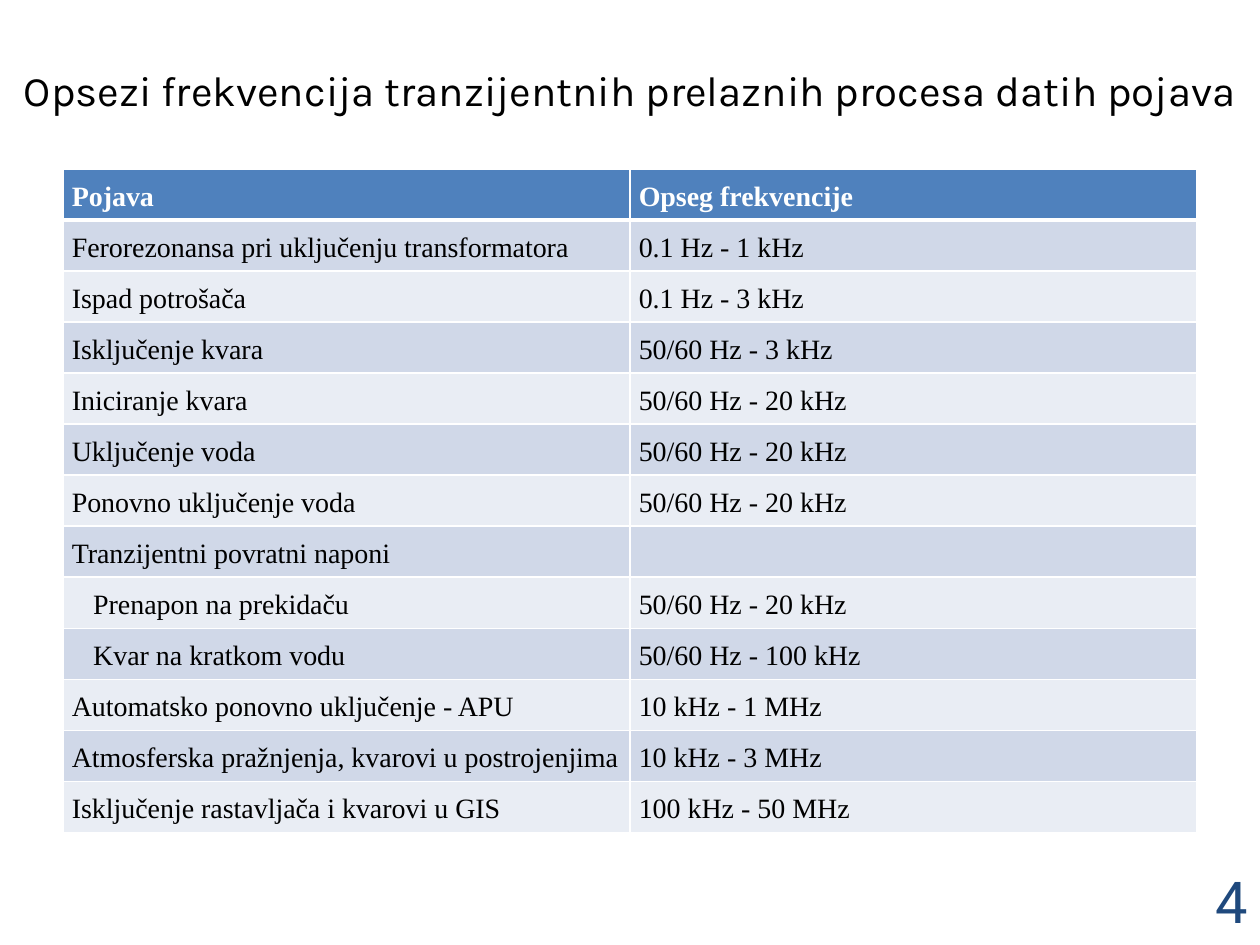
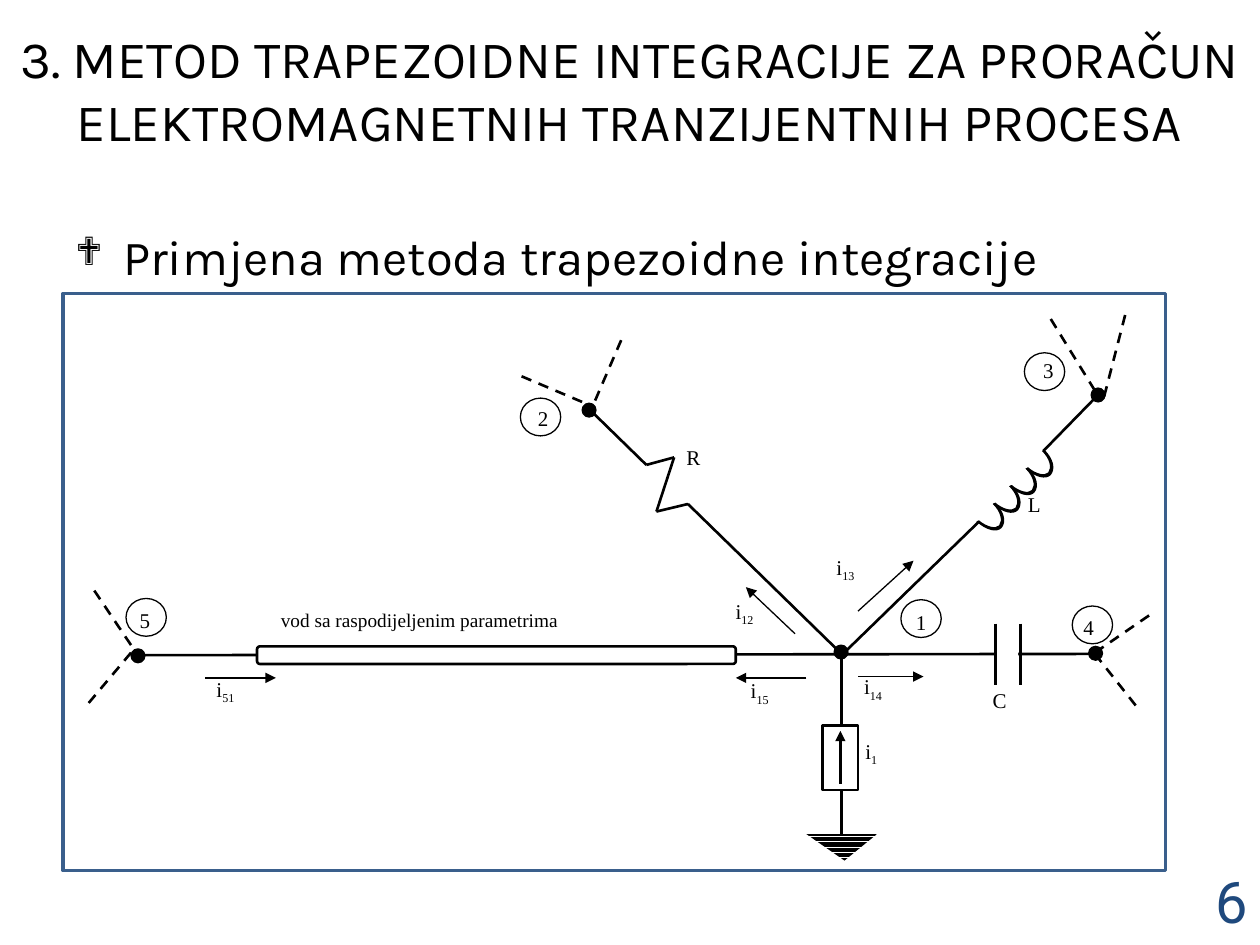
from dataclasses import dataclass
from itertools import pairwise
from typing import NamedTuple

from lxml import etree
from pptx import Presentation
from pptx.dml.color import RGBColor
from pptx.enum.dml import MSO_LINE, MSO_PATTERN
from pptx.enum.shapes import MSO_CONNECTOR, MSO_SHAPE
from pptx.enum.text import MSO_ANCHOR, PP_ALIGN
from pptx.oxml.ns import qn
from pptx.util import Pt

PX = 9144  # EMU in one px, 100 px to the inch
LEFT, CENTER, RIGHT = PP_ALIGN.LEFT, PP_ALIGN.CENTER, PP_ALIGN.RIGHT
TOP, MIDDLE = MSO_ANCHOR.TOP, MSO_ANCHOR.MIDDLE
RECT, ROUND = MSO_SHAPE.RECTANGLE, MSO_SHAPE.ROUNDED_RECTANGLE
OVAL, WEDGE = MSO_SHAPE.OVAL, MSO_SHAPE.ISOSCELES_TRIANGLE
STRAIGHT, DASH = MSO_CONNECTOR.STRAIGHT, MSO_LINE.DASH
STRIPES = MSO_PATTERN.DARK_HORIZONTAL


@dataclass(frozen=True)
class Theme:
    black: str = "000000"
    white: str = "FFFFFF"
    head: str = "4F81BD"
    bands: tuple = ("D0D8E8", "E9EDF4")
    frame: str = "3A5F8C"
    number: str = "1F497D"
    sans: str = "Karla"
    serif: str = "Times New Roman"
    digit: str = "Roboto"
    symbol: str = "Wingdings"
    thin: float = 0.75
    thick: float = 1.5
    number_size: int = 33
    body_size: int = 28
    cell_size: int = 16
    label_size: int = 12
    note_size: int = 11


THEME = Theme()


class Box(NamedTuple):
    x: int
    y: int
    w: int
    h: int

    def emu(self) -> list:
        return [PX * side for side in self]


class Row(NamedTuple):
    event: str
    band: str
    indent: int = 0


class Wire(NamedTuple):
    x1: int
    y1: int
    x2: int
    y2: int


class Node(NamedTuple):
    name: str
    ring: tuple
    label: tuple
    dot: tuple


class Label(NamedTuple):
    x: int
    y: int
    text: str
    sub: str = ""


HEADER = Row("Pojava", "Opseg frekvencije")
ROWS = [
    Row("Ferorezonansa pri uključenju transformatora", "0.1 Hz - 1 kHz"),
    Row("Ispad potrošača", "0.1 Hz - 3 kHz"),
    Row("Isključenje kvara", "50/60 Hz - 3 kHz"),
    Row("Iniciranje kvara", "50/60 Hz - 20 kHz"),
    Row("Uključenje voda", "50/60 Hz - 20 kHz"),
    Row("Ponovno uključenje voda", "50/60 Hz - 20 kHz"),
    Row("Tranzijentni povratni naponi", ""),
    Row("Prenapon na prekidaču", "50/60 Hz - 20 kHz", 17),
    Row("Kvar na kratkom vodu", "50/60 Hz - 100 kHz", 17),
    Row("Automatsko ponovno uključenje - APU", "10 kHz - 1 MHz"),
    Row("Atmosferska pražnjenja, kvarovi u postrojenjima", "10 kHz - 3 MHz"),
    Row("Isključenje rastavljača i kvarovi u GIS", "100 kHz - 50 MHz"),
]

NODES = [
    Node("1", (715, 476), (717, 479), (662, 512)),
    Node("2", (413, 316), (417, 317), (462, 320)),
    Node("3", (813, 280), (818, 279), (866, 308)),
    Node("4", (851, 481), (850, 483), (864, 513)),
    Node("5", (100, 475), (101, 477), (104, 515)),
]
RESISTOR = [(471, 328), (513, 369), (535, 363), (521, 406), (546, 400), (669, 520)]
BRANCHES = [
    Wire(104, 520, 869, 519),
    Wire(669, 519, 777, 414),
    Wire(828, 358, 869, 316),
    Wire(668, 665, 668, 519),
] + [Wire(*start, *end) for start, end in pairwise(RESISTOR)]
PLATES = [Wire(x, 495, x, 544) for x in (790, 810)]
SOURCE = Wire(667, 622, 667, 580)
CURRENTS = [
    Wire(163, 538, 219, 538),
    Wire(681, 485, 725, 445),
    Wire(631, 503, 592, 466),
    Wire(681, 537, 733, 537),
    Wire(640, 538, 584, 538),
]
STUBS = [
    Wire(104, 512, 73, 466),
    Wire(104, 518, 67, 562),
    Wire(462, 319, 410, 297),
    Wire(493, 270, 471, 321),
    Wire(869, 310, 832, 250),
    Wire(893, 250, 876, 316),
    Wire(869, 518, 917, 485),
    Wire(869, 519, 903, 562),
]
LABELS = [
    Label(574, 470, "i", "12"),
    Label(654, 435, "i", "13"),
    Label(586, 533, "i", "15"),
    Label(162, 532, "i", "51"),
    Label(676, 530, "i", "14"),
    Label(677, 581, "i", "1"),
    Label(535, 348, "R"),
    Label(806, 385, "L"),
    Label(778, 541, "C"),
]
# One coil turn: each edge is a start point and two cubic curves
INNER = [(827, 358), (833, 364), (835, 371), (832, 375),
         (829, 378), (822, 376), (816, 371)]
OUTER = [(814, 372), (822, 379), (830, 381), (834, 377),
         (838, 372), (836, 364), (829, 357)]
BENDS = (0, 3, 7, 10)  # first segment of each curve along the turn
TURNS, STEP_X, STEP_Y = 4, -13, 14


def rgb(code: str) -> RGBColor:
    return RGBColor.from_string(code)


def put(frame, text: str, *, size: float, font: str = THEME.serif,
        color: str = THEME.black, bold: bool = False, align=LEFT,
        spacing: float | None = None, sub: str = "", bullet: str = "") -> None:
    """Write one paragraph, with an optional subscript or bullet."""
    para = frame.paragraphs[0]
    para.alignment = align
    if spacing:
        para.line_spacing = spacing
    if bullet:
        props = para._p.get_or_add_pPr()
        props.set("marL", str(38 * PX))
        props.set("indent", str(-38 * PX))
        etree.SubElement(props, qn("a:buSzPct"), val="80000")
        etree.SubElement(props, qn("a:buFont"), typeface=THEME.symbol, charset="2")
        etree.SubElement(props, qn("a:buChar"), char=bullet)
    for part in filter(None, (text, sub)):
        run = para.add_run()
        run.text = part
        run.font.size = Pt(size)
        run.font.name = font
        run.font.bold = bold
        run.font.color.rgb = rgb(color)
    if sub:
        run._r.get_or_add_rPr().set("baseline", "-25000")


def write(slide, box: Box, text: str, anchor=TOP, **style) -> None:
    frame = slide.shapes.add_textbox(*box.emu()).text_frame
    frame.word_wrap = True
    frame.vertical_anchor = anchor
    put(frame, text, **style)


def paint(shape, fill: str, line: str = "", width: float = THEME.thin) -> None:
    shape.shadow.inherit = False
    shape.fill.solid()
    shape.fill.fore_color.rgb = rgb(fill)
    if line:
        shape.line.color.rgb = rgb(line)
        shape.line.width = Pt(width)
    else:
        shape.line.fill.background()


def draw(slide, kind, box: Box, fill: str = THEME.white, line: str = "",
         width: float = THEME.thin):
    shape = slide.shapes.add_shape(kind, *box.emu())
    paint(shape, fill, line, width)
    return shape


def link(slide, wire: Wire, width: float = THEME.thick, dash: bool = False,
         arrow: bool = False) -> None:
    item = slide.shapes.add_connector(STRAIGHT, *(PX * end for end in wire))
    item.line.color.rgb = rgb(THEME.black)
    item.line.width = Pt(width)
    if dash:
        item.line.dash_style = DASH
    if arrow:
        etree.SubElement(item.line._get_or_add_ln(), qn("a:tailEnd"), type="triangle")
    etree.SubElement(item._element.spPr, qn("a:effectLst"))


def bend(shape) -> None:
    """Turn each run of three straight segments into one cubic curve."""
    lines = list(shape._element.iter(qn("a:lnTo")))
    for first in BENDS:
        trio = lines[first:first + 3]
        owner = trio[0].getparent()
        cubic = etree.Element(qn("a:cubicBezTo"))
        trio[0].addprevious(cubic)
        for line in trio:
            cubic.append(line[0])
            owner.remove(line)


def coil(slide) -> None:
    for turn in range(TURNS):
        points = [(x + turn * STEP_X, y + turn * STEP_Y) for x, y in INNER + OUTER]
        pen = slide.shapes.build_freeform(*points[0], scale=PX)
        pen.add_line_segments(points[1:], close=True)
        shape = pen.convert_to_shape()
        bend(shape)
        paint(shape, THEME.black)


def edge(cell, below: int) -> None:
    """Give a cell white borders; below is the width of the lower one."""
    props = cell._tc.get_or_add_tcPr()
    for side, width in (("L", 1), ("R", 1), ("T", 1), ("B", below)):
        line = etree.SubElement(props, qn(f"a:ln{side}"), w=str(Pt(width)))
        fill = etree.SubElement(line, qn("a:solidFill"))
        etree.SubElement(fill, qn("a:srgbClr"), val=THEME.white)


def grid(slide, box: Box) -> None:
    rows = [HEADER] + ROWS
    table = slide.shapes.add_table(len(rows), 2, *box.emu()).table
    table.horz_banding = False
    for i, row in enumerate(rows):
        table.rows[i].height = box.h * PX // len(rows)
        head = i == 0
        for j, text in enumerate((row.event, row.band)):
            cell = table.cell(i, j)
            cell.margin_left = PX * (7 + (0 if j else row.indent))
            cell.margin_right = PX * 7
            cell.margin_top = cell.margin_bottom = 0
            cell.vertical_anchor = MIDDLE
            edge(cell, 3 if head else 1)
            cell.fill.solid()
            cell.fill.fore_color.rgb = rgb(THEME.head if head else THEME.bands[(i - 1) % 2])
            put(cell.text_frame, text, size=THEME.cell_size, bold=head, spacing=1.15,
                color=THEME.white if head else THEME.black)


def page(deck, title: str, size: int, number: int):
    """Add a blank slide with its title and slide number."""
    slide = deck.slides.add_slide(deck.slide_layouts[6])
    write(slide, Box(0, 0, 1000, 142), title, MIDDLE, size=size, font=THEME.sans,
          align=CENTER)
    write(slide, Box(717, 695, 283, 40), str(number), MIDDLE, size=THEME.number_size,
          font=THEME.digit, color=THEME.number, align=RIGHT)
    return slide


def circuit(slide) -> None:
    black, thick = THEME.black, THEME.thick
    draw(slide, RECT, Box(50, 233, 875, 458), line=THEME.frame, width=2)
    for node in NODES:
        draw(slide, OVAL, Box(*node.ring, 32, 30), line=black)
    for wire in BRANCHES:
        link(slide, wire)
    ground = draw(slide, WEDGE, Box(640, 662, 56, 21))
    ground.rotation = 180
    ground.adjustments[0] = 0.46
    ground.fill.patterned()
    ground.fill.pattern = STRIPES
    ground.fill.fore_color.rgb = rgb(black)
    ground.fill.back_color.rgb = rgb(THEME.white)
    draw(slide, RECT, Box(653, 576, 28, 51), line=black, width=thick)
    link(slide, SOURCE, arrow=True)
    draw(slide, RECT, Box(790, 503, 18, 42))
    for plate in PLATES:
        link(slide, plate)
    draw(slide, ROUND, Box(204, 513, 380, 14), line=black, width=thick)
    coil(slide)
    for wire in CURRENTS:
        link(slide, wire, width=THEME.thin, arrow=True)
    for label in LABELS:
        write(slide, Box(label.x, label.y, 57, 42), label.text, sub=label.sub,
              size=THEME.label_size)
    write(slide, Box(213, 478, 359, 39), "vod sa raspodijeljenim parametrima",
          size=THEME.note_size)
    for node in NODES:
        draw(slide, OVAL, Box(*node.dot, 11, 11), fill=black, line=black)
        write(slide, Box(*node.label, 41, 46), node.name, size=THEME.label_size)
    for wire in STUBS:
        link(slide, wire, dash=True)


def main() -> None:
    deck = Presentation()
    deck.slide_width, deck.slide_height = 1000 * PX, 750 * PX
    ranges = page(deck, "Opsezi frekvencija tranzijentnih prelaznih procesa datih pojava",
                  24, 4)
    grid(ranges, Box(50, 134, 900, 527))
    method = page(deck, "3. METOD TRAPEZOIDNE INTEGRACIJE ZA PRORAČUN "
                  "ELEKTROMAGNETNIH TRANZIJENTNIH PROCESA", 30, 6)
    write(method, Box(50, 175, 950, 495), "Primjena metoda trapezoidne integracije",
          size=THEME.body_size, font=THEME.sans, bullet="❖")
    circuit(method)
    deck.save("out.pptx")


if __name__ == "__main__":
    main()
